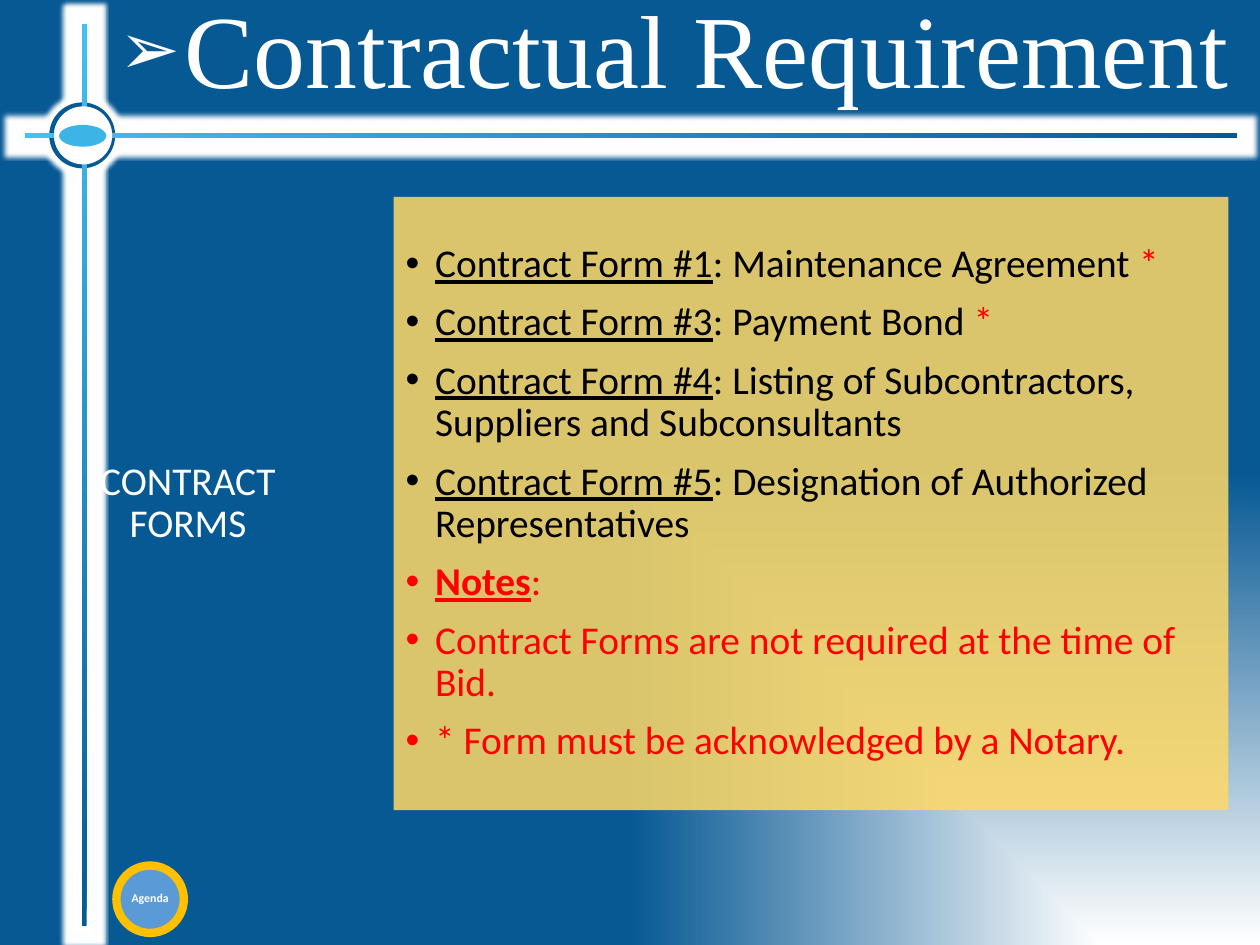
from lxml import etree
from pptx import Presentation
from pptx.dml.color import RGBColor
from pptx.enum.shapes import MSO_SHAPE as Shape
from pptx.enum.text import MSO_ANCHOR as Anchor, MSO_AUTO_SIZE as AutoSize, PP_ALIGN as Align
from pptx.oxml import parse_xml
from pptx.oxml.ns import nsdecls, qn
from pptx.util import Pt

PX = 9525  # 96 px to the inch
COLORS = {
    "navy": "075994", "sky": "43C0F4", "emblem": "3CB4E6", "white": "FFFFFF",
    "panel": "FFD966", "black": "000000", "red": "FF0000",
    "button": "5B9BD5", "ring": "FFC000",
}


def color(name):
    return RGBColor.from_string(COLORS[name])


def style(shape, fill, angle=None, glow=0):
    """Fill with one colour, or with a (start, end) gradient; add a white glow."""
    shape.shadow.inherit = False
    shape.line.fill.background()
    if angle is None:
        shape.fill.solid()
        shape.fill.fore_color.rgb = color(fill)
    else:
        shape.fill.gradient()
        shape.fill.gradient_angle = 360 - angle
        for stop, name, position in zip(shape.fill.gradient_stops, fill, (0, 1)):
            stop.color.rgb = color(name)
            stop.position = position
    if glow:
        effects = shape._element.spPr.find(qn("a:effectLst"))
        halo = etree.SubElement(effects, qn("a:glow"), rad=str(glow * PX))
        etree.SubElement(halo, qn("a:srgbClr"), val=COLORS["white"])


presentation = Presentation()
presentation.slide_width, presentation.slide_height = 1280 * PX, 960 * PX
slide = presentation.slides.add_slide(presentation.slide_layouts[1])
shapes = slide.shapes

# Background: white glow from the bottom right corner
slide.background.fill.solid()
background = slide._element.cSld.find(qn("p:bg")).find(qn("p:bgPr"))
background.replace(background[0], parse_xml(
    f'<a:gradFill {nsdecls("a")} rotWithShape="1"><a:gsLst>'
    f'<a:gs pos="0"><a:srgbClr val="{COLORS["white"]}"/></a:gs>'
    f'<a:gs pos="100000"><a:srgbClr val="{COLORS["navy"]}"/></a:gs></a:gsLst>'
    '<a:path path="rect"><a:fillToRect l="100000" t="100000"/></a:path></a:gradFill>'))

# Title
title = shapes.title
title.left, title.top, title.width, title.height = [n * PX for n in (112, 8, 1152, 96)]
title.text_frame.text = "Contractual Requirement"
title.text_frame.auto_size = AutoSize.NONE
title.text_frame.vertical_anchor = Anchor.MIDDLE
title.text_frame.margin_right = 0
paragraph = title.text_frame.paragraphs[0]
paragraph.alignment = Align.LEFT
paragraph.line_spacing = 0.9
paragraph.font.size = Pt(79)
paragraph.font.name = "Times New Roman"
paragraph.font.color.rgb = color("white")
bullets = [(paragraph, 66, "➢", 70, "Arial")]

# Glowing bands, their bars, and the round emblem where they cross
for kind, box, fill, angle, glow in (
    (Shape.RECTANGLE, (16, 128, 1248, 19), "white", None, 8),
    (Shape.RECTANGLE, (75, 16, 19, 932), "white", None, 8),
    (Shape.DONUT, (50, 104, 67, 67), "navy", None, 10),
    (Shape.RECTANGLE, (25, 135, 1232, 5), ("navy", "sky"), 180, 0),
    (Shape.RECTANGLE, (83, 24, 5, 917), ("navy", "sky"), 270, 0),
    (Shape.OVAL, (55, 108, 59, 59), "white", None, 0),
    (Shape.OVAL, (60, 127, 48, 22), "emblem", None, 0),
):
    shape = shapes.add_shape(kind, *[n * PX for n in box])
    style(shape, fill, angle, glow)
    if kind == Shape.DONUT:
        shape.adjustments[0] = 0.07

# Label
label = shapes.add_textbox(*[n * PX for n in (66, 460, 250, 104)])
text_frame = label.text_frame
text_frame.word_wrap = True
text_frame.vertical_anchor = Anchor.MIDDLE
text_frame.margin_left = text_frame.margin_right = 22 * PX
text_frame.margin_top = text_frame.margin_bottom = 8 * PX
text_frame.text = "CONTRACT FORMS"
paragraph = text_frame.paragraphs[0]
paragraph.alignment = Align.CENTER
paragraph.line_spacing = 0.9
paragraph.font.size = Pt(30)
paragraph.font.name = "Calibri"
paragraph.font.color.rgb = color("white")

# Panel with the list of forms
panel_box = [n * PX for n in (400, 200, 848, 623)]
panel = shapes.add_shape(Shape.RECTANGLE, *panel_box)
style(panel, "panel")
panel_color = panel._element.spPr.find(qn("a:solidFill"))[0]
etree.SubElement(panel_color, qn("a:alpha"), val="85000")

body = slide.placeholders[1]
shapes._spTree.append(body._element)  # in front of the panel
body.left, body.top, body.width, body.height = panel_box
text_frame = body.text_frame
text_frame.auto_size = AutoSize.NONE
text_frame.vertical_anchor = Anchor.MIDDLE
text_frame.margin_left = text_frame.margin_right = 12 * PX
text_frame.margin_top = text_frame.margin_bottom = 12 * PX

# Each item: colour, underlined heading, plain text, red mark
items = [
    ("black", "Contract Form #1", ": Maintenance Agreement ", "*"),
    ("black", "Contract Form #3", ": Payment Bond ", "*"),
    ("black", "Contract Form #4", ": Listing of Subcontractors, Suppliers and Subconsultants", ""),
    ("black", "Contract Form #5", ": Designation of Authorized Representatives", ""),
    ("red", "Notes", ":", ""),
    ("red", "", "Contract Forms are not required at the time of Bid.", ""),
    ("red", "", "* Form must be acknowledged by a Notary.", ""),
]
for index, (text_color, heading, text, mark) in enumerate(items):
    paragraph = text_frame.add_paragraph() if index else text_frame.paragraphs[0]
    paragraph.level = 1
    paragraph.line_spacing = 0.9
    paragraph.space_before, paragraph.space_after = Pt(0), Pt(12)
    paragraph.font.size = Pt(30)
    paragraph.font.name = "Calibri"
    for part, part_color in ((heading, text_color), (text, text_color), (mark, "red")):
        if part:
            run = paragraph.add_run()
            run.text = part
            run.font.color.rgb = color(part_color)
            if part == heading:
                run.font.underline = True
                run.font.bold = heading == "Notes"
    bullets.append((paragraph, 30, "•", 100, "Arial"))

# Bullets of the title and the list
for paragraph, indent, character, percent, font in bullets:
    properties = paragraph._p.get_or_add_pPr()
    properties.set("marL", str(indent * PX))
    properties.set("indent", str(-indent * PX))
    for tag, name, value in (("buSzPct", "val", str(percent * 1000)),
                             ("buFont", "typeface", font), ("buChar", "char", character)):
        bullet = parse_xml(f'<a:{tag} {nsdecls("a")} {name}="{value}"/>')
        properties.insert_element_before(bullet, "a:tabLst", "a:defRPr", "a:extLst")

# Agenda button
button = shapes.add_shape(Shape.OVAL, *[n * PX for n in (119, 879, 67, 67)])
style(button, "button")
text_frame = button.text_frame
text_frame.margin_left = text_frame.margin_right = 0
text_frame.margin_top = text_frame.margin_bottom = 0
text_frame.word_wrap = True
text_frame.vertical_anchor = Anchor.MIDDLE
text_frame.text = "Agenda"
paragraph = text_frame.paragraphs[0]
paragraph.alignment = Align.CENTER
paragraph.space_before = Pt(6)
paragraph.font.size = Pt(9)
paragraph.font.bold = True
paragraph.font.name = "Calibri"
paragraph.font.color.rgb = color("white")

ring = shapes.add_shape(Shape.DONUT, *[n * PX for n in (114, 875, 77, 77)])
style(ring, "ring")
ring.adjustments[0] = 0.11

presentation.save("out.pptx")
